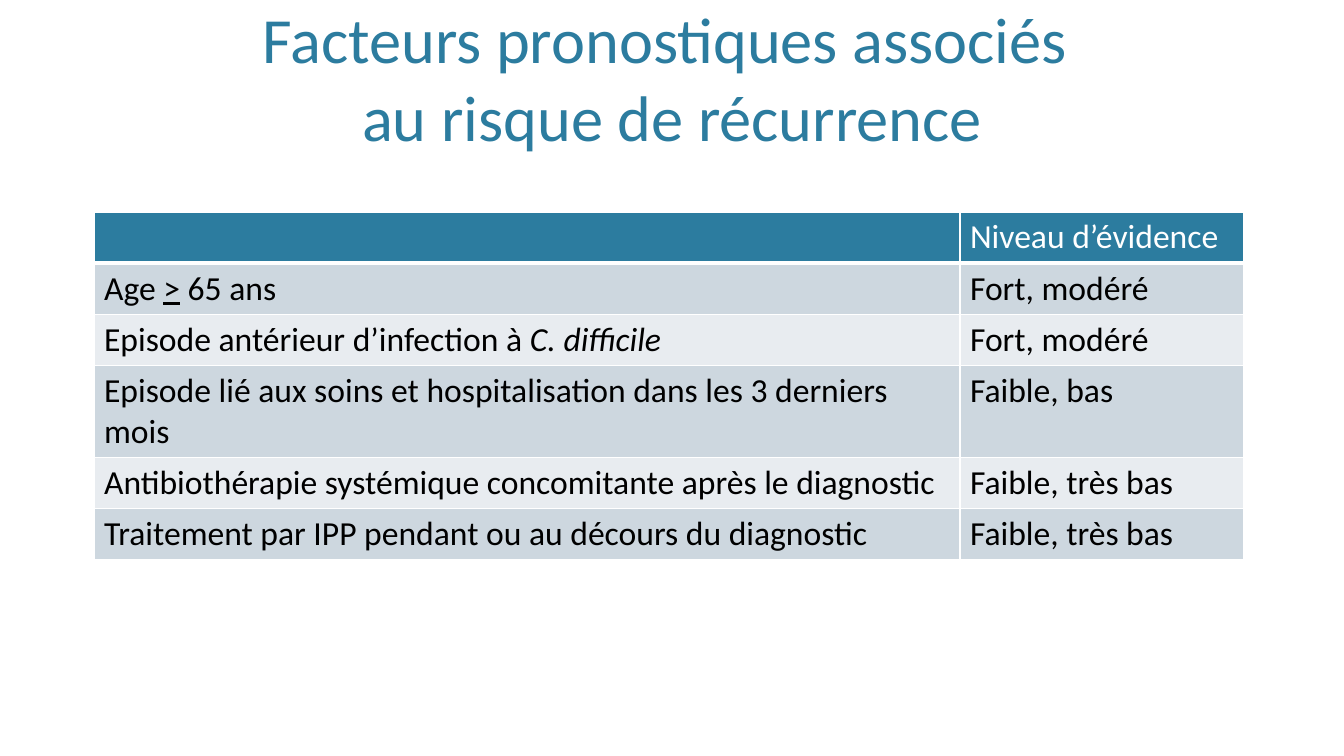
import pptx
import pptx.dml.color
import pptx.enum.text
import pptx.oxml
import pptx.oxml.ns
import pptx.util

RGBColor = pptx.dml.color.RGBColor
TEAL = RGBColor(0x2C, 0x7C, 0x9F)
BAND_DARK = RGBColor(0xCD, 0xD7, 0xDF)
BAND_LIGHT = RGBColor(0xE8, 0xEC, 0xF0)
WHITE = RGBColor(0xFF, 0xFF, 0xFF)
BLACK = RGBColor(0x00, 0x00, 0x00)

EMU_PER_PX = 914400 / 100.8
TITLE = "Facteurs pronostiques associés \vau risque de récurrence"
HEADER = ([], [("Niveau d’évidence", {})])
FACTORS = [
    ([("Age ", {}), (">", {"underline": True}), (" 65 ans", {})], "Fort, modéré"),
    ([("Episode antérieur d’infection à ", {}), ("C. difficile", {"italic": True})],
     "Fort, modéré"),
    ([("Episode lié aux soins et hospitalisation dans les 3 derniers mois", {})],
     "Faible, bas"),
    ([("Antibiothérapie systémique concomitante après le diagnostic", {})],
     "Faible, très bas"),
    ([("Traitement par IPP pendant ou au décours du diagnostic", {})],
     "Faible, très bas"),
]


def px(count):
    return pptx.util.Emu(round(count * EMU_PER_PX))


def apply(target, values):
    for name, value in values.items():
        setattr(target, name, value)


class Page:
    font_name = "Calibri"

    def __init__(self, deck):
        self.slide = deck.slides.add_slide(deck.slide_layouts[5])

    def format_span(self, span, size, color, **extra):
        apply(span.font, {"name": self.font_name, "size": pptx.util.Pt(size),
                          "bold": False, **extra})
        span.font.color.rgb = color

    def title(self, text, left, top, width, height):
        box = self.slide.shapes.title
        apply(box, {"left": px(left), "top": px(top),
                    "width": px(width), "height": px(height)})
        frame = box.text_frame
        frame.text = text
        apply(frame, {"word_wrap": True,
                      "auto_size": pptx.enum.text.MSO_AUTO_SIZE.NONE,
                      "vertical_anchor": pptx.enum.text.MSO_ANCHOR.BOTTOM})
        para = frame.paragraphs[0]
        para.alignment = pptx.enum.text.PP_ALIGN.CENTER
        for span in para.runs:
            self.format_span(span, 46, TEAL)

    def border(self, cell, side, points):
        width = pptx.util.Pt(points)
        cell._tc.get_or_add_tcPr().append(pptx.oxml.parse_xml(
            f'<a:ln{side} {pptx.oxml.ns.nsdecls("a")} w="{width}"><a:solidFill>'
            f'<a:srgbClr val="{WHITE}"/></a:solidFill></a:ln{side}>'))

    def cell(self, cell, spans, fill, color, borders):
        for side, points in borders.items():
            self.border(cell, side, points)
        cell.fill.solid()
        cell.fill.fore_color.rgb = fill
        para = cell.text_frame.paragraphs[0]
        for text, extra in spans:
            span = para.add_run()
            span.text = text
            self.format_span(span, 24, color, **extra)

    def table(self, rows, left, top, widths, height, row_height):
        """Draw rows of cells, each a list of (text, font values); the first is the header."""
        frame = self.slide.shapes.add_table(
            len(rows), len(widths), px(left), px(top), px(sum(widths)), px(height))
        table = frame.table
        apply(table, {"first_row": False, "horz_banding": False})
        for column, width in zip(table.columns, widths):
            column.width = px(width)
        for index, row in enumerate(rows):
            table.rows[index].height = px(row_height)
            if index == 0:
                fill, color = TEAL, WHITE
            else:
                fill, color = (BAND_DARK if index % 2 else BAND_LIGHT), BLACK
            borders = {"L": 1, "R": 1, "T": 3 if index == 1 else 1,
                       "B": 3 if index == 0 else 1}
            for column, spans in enumerate(row):
                self.cell(table.cell(index, column), spans, fill, color, borders)
        frame.height = px(height)


def main():
    deck = pptx.Presentation()
    apply(deck, {"slide_width": px(1344), "slide_height": px(756)})
    page = Page(deck)
    page.title(TITLE, 81, 12, 1182, 147)
    rows = [HEADER] + [(factor, [(level, {})]) for factor, level in FACTORS]
    page.table(rows, 94, 212, [866, 284], 302, 41)
    deck.save("out.pptx")


if __name__ == "__main__":
    main()
